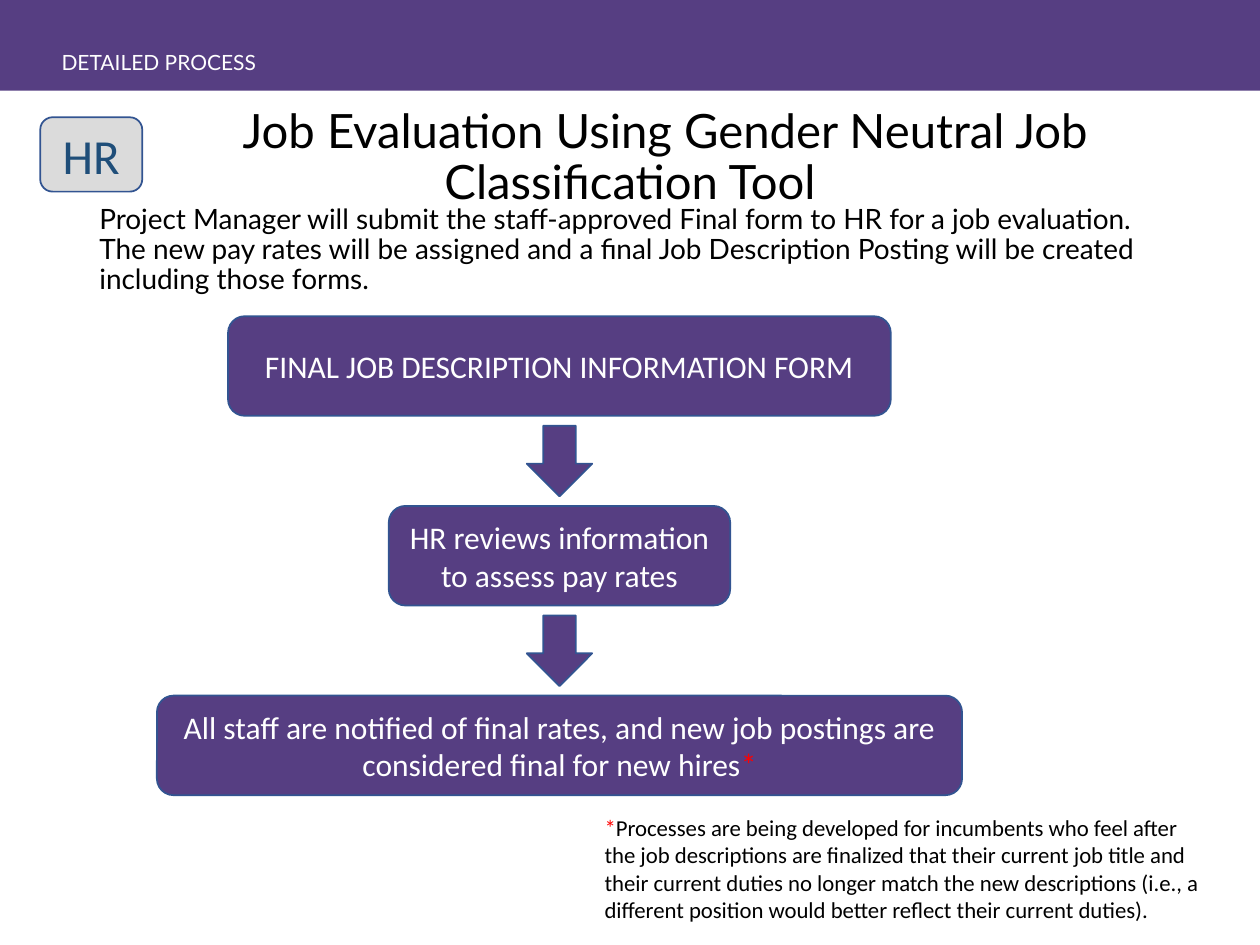
from pptx import Presentation
from pptx.dml.color import RGBColor
from pptx.enum.shapes import MSO_SHAPE
from pptx.enum.text import MSO_ANCHOR, PP_ALIGN
from pptx.util import Pt

RECT = MSO_SHAPE.RECTANGLE
ROUNDED = MSO_SHAPE.ROUNDED_RECTANGLE
ARROW = MSO_SHAPE.RIGHT_ARROW
TOP, MIDDLE = MSO_ANCHOR.TOP, MSO_ANCHOR.MIDDLE
LEFT, CENTER = PP_ALIGN.LEFT, PP_ALIGN.CENTER

PURPLE = RGBColor(0x56, 0x3E, 0x82)
OUTLINE = RGBColor(0x32, 0x54, 0x91)
GREY = RGBColor(0xDB, 0xDB, 0xDB)
NAVY = RGBColor(0x1F, 0x4E, 0x79)
RED = RGBColor(0xFF, 0x00, 0x00)
WHITE = RGBColor(0xFF, 0xFF, 0xFF)
BLACK = RGBColor(0x00, 0x00, 0x00)

FLOW_AXIS, FLOW_TOP, STEP_PITCH, STEP_HEIGHT = 319.7, 180.7, 108.4, 56.9
ARROW_LENGTH, ARROW_BREADTH, ARROW_DROP = 40.3, 37.4, 64.1
STEPS = [
    (378.7, [("FINAL JOB DESCRIPTION INFORMATION FORM", WHITE)]),
    (195.1, [("HR reviews information to assess pay rates", WHITE)]),
    (460.1, [("All staff are notified of final rates, and new job postings "
              "are considered final for new hires", WHITE), ("*", RED)]),
]


def write(frame, runs, font, size, align=LEFT, anchor=TOP, spacing=None, indent=0):
    """Fill a text frame with one paragraph of (text, colour) runs."""
    frame.word_wrap = True
    frame.vertical_anchor = anchor
    paragraph = frame.paragraphs[0]
    paragraph.alignment = align
    paragraph.line_spacing = spacing
    if indent:
        paragraph._p.get_or_add_pPr().set("indent", str(Pt(indent)))
    for text, color in runs:
        run = paragraph.add_run()
        run.text = text
        run.font.name = font
        run.font.size = Pt(size)
        run.font.color.rgb = color


def add_text(slide, box, runs, font, size, **layout):
    """Add a text box at (left, top, width, height)."""
    label = slide.shapes.add_textbox(*map(Pt, box))
    write(label.text_frame, runs, font, size, **layout)


def add_block(slide, kind, box, fill, outlined=True):
    """Add a filled shape, with the thin blue outline if wanted."""
    block = slide.shapes.add_shape(kind, *map(Pt, box))
    block.shadow.inherit = False
    block.fill.solid()
    block.fill.fore_color.rgb = fill
    if outlined:
        block.line.color.rgb = OUTLINE
        block.line.width = Pt(1)
    else:
        block.line.fill.background()
    return block


def add_flow(slide):
    """Add the process steps down one axis, with an arrow between neighbours."""
    for index, (width, runs) in enumerate(STEPS):
        top = FLOW_TOP + index * STEP_PITCH
        if index:
            arrow_top = top - STEP_PITCH + ARROW_DROP
            arrow = add_block(slide, ARROW, (FLOW_AXIS - ARROW_LENGTH / 2, arrow_top,
                                             ARROW_LENGTH, ARROW_BREADTH), PURPLE)
            arrow.rotation = 90
        step = add_block(slide, ROUNDED, (FLOW_AXIS - width / 2, top, width, STEP_HEIGHT), PURPLE)
        write(step.text_frame, runs, "Calibri", 18, align=CENTER, anchor=MIDDLE)


def main():
    """Build the job evaluation slide and save it."""
    deck = Presentation()
    deck.slide_width, deck.slide_height = Pt(720), Pt(540)
    slide = deck.slides.add_slide(deck.slide_layouts[6])

    add_block(slide, RECT, (-0.7, -1.4, 721.4, 53.3), PURPLE, outlined=False)
    add_text(slide, (49.7, 60.5, 620.6, 60.5),
             [("Job Evaluation Using Gender Neutral Job Classification Tool", BLACK)],
             "Lato", 27, align=CENTER, anchor=MIDDLE, spacing=0.9, indent=40)
    add_text(slide, (28.1, 26.6, 146.9, 22.3), [("DETAILED PROCESS", WHITE)],
             "Lato", 12, spacing=0.9)
    add_text(slide, (49.7, 113.8, 620.6, 61.2),
             [("Project Manager will submit the staff-approved Final form to HR for a job "
               "evaluation. The new pay rates will be assigned and a final Job Description "
               "Posting will be created including those forms.", BLACK)],
             "Lato", 16, spacing=0.9)
    badge = add_block(slide, ROUNDED, (23, 67, 58.3, 42.5), GREY)
    write(badge.text_frame, [("HR", NAVY)], "Calibri", 28, align=CENTER, anchor=MIDDLE)
    add_flow(slide)
    add_text(slide, (338.4, 461.5, 355, 70.6),
             [("*", RED),
              ("Processes are being developed for incumbents who feel after the job "
               "descriptions are finalized that their current job title and their current "
               "duties no longer match the new descriptions (i.e., a different position "
               "would better reflect their current duties).", BLACK)],
             "Calibri", 13)
    deck.save("out.pptx")


if __name__ == "__main__":
    main()
